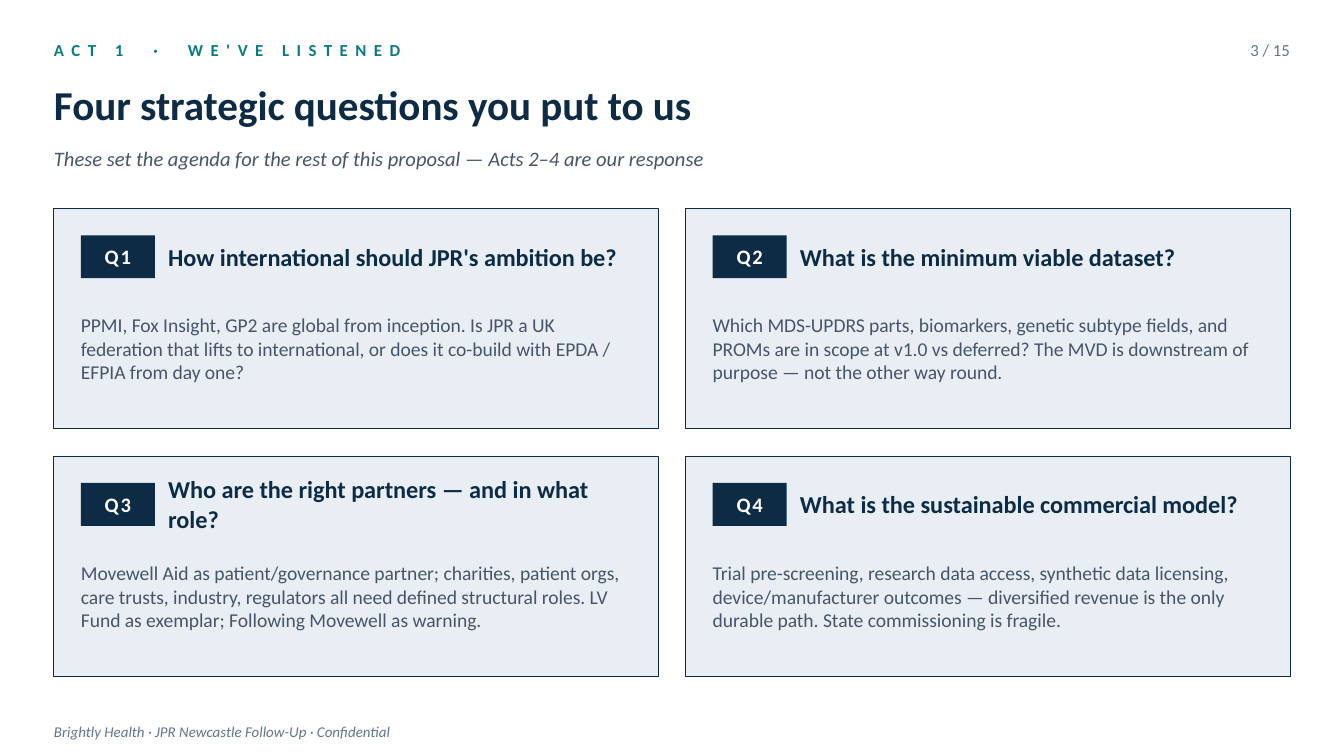
from pptx import Presentation
from pptx.dml.color import RGBColor
from pptx.enum.shapes import MSO_SHAPE
from pptx.enum.text import MSO_ANCHOR, MSO_AUTO_SIZE, PP_ALIGN
from pptx.util import Cm, Pt

NAVY = RGBColor(0x0D, 0x2B, 0x45)
TEAL = RGBColor(0x0A, 0x7B, 0x83)
SLATE = RGBColor(0x47, 0x55, 0x69)
GREY = RGBColor(0x64, 0x74, 0x8B)
PALE = RGBColor(0xE8, 0xEE, 0xF4)
WHITE = RGBColor(0xFF, 0xFF, 0xFF)

MARGIN = 1.02
CONTENT_WIDTH = 23.37
GRID_TOP = 3.94
CARD_WIDTH, CARD_HEIGHT = 11.43, 4.17
GAP = 0.51
PADDING = 0.51

QUESTIONS = [
    ("How international should JPR's ambition be?",
     "PPMI, Fox Insight, GP2 are global from inception. Is JPR a UK federation that "
     "lifts to international, or does it co-build with EPDA / EFPIA from day one?"),
    ("What is the minimum viable dataset?",
     "Which MDS-UPDRS parts, biomarkers, genetic subtype fields, and PROMs are in scope "
     "at v1.0 vs deferred? The MVD is downstream of purpose — not the other way round."),
    ("Who are the right partners — and in what role?",
     "Movewell Aid as patient/governance partner; charities, patient orgs, care trusts, "
     "industry, regulators all need defined structural roles. LV Fund as exemplar; "
     "Following Movewell as warning."),
    ("What is the sustainable commercial model?",
     "Trial pre-screening, research data access, synthetic data licensing, "
     "device/manufacturer outcomes — diversified revenue is the only durable path. "
     "State commissioning is fragile."),
]


def write_text(shape, text, size, color, bold=False, italic=False,
               align=PP_ALIGN.LEFT, spacing=0):
    """Write one formatted paragraph, vertically centred and without insets."""
    frame = shape.text_frame
    frame.word_wrap = True
    frame.auto_size = MSO_AUTO_SIZE.NONE
    frame.vertical_anchor = MSO_ANCHOR.MIDDLE
    frame.margin_left = frame.margin_right = frame.margin_top = frame.margin_bottom = 0
    paragraph = frame.paragraphs[0]
    paragraph.alignment = align
    run = paragraph.add_run()
    run.text = text
    font = run.font
    font.name = "Calibri"
    font.size = Pt(size)
    font.bold = bold
    font.italic = italic
    font.color.rgb = color
    if spacing:
        font._element.set("spc", str(spacing * 100))


def add_label(slide, box, text, **style):
    """Add a text box at box, given in centimetres."""
    write_text(slide.shapes.add_textbox(*map(Cm, box)), text, **style)


def add_title(slide, box, text, **style):
    """Place and format the title placeholder."""
    title = slide.shapes.title
    title.left, title.top, title.width, title.height = map(Cm, box)
    write_text(title, text, **style)


def add_rectangle(slide, box, fill, line=None):
    """Add a flat rectangle with an optional thin outline."""
    shape = slide.shapes.add_shape(MSO_SHAPE.RECTANGLE, *map(Cm, box))
    shape.shadow.inherit = False
    shape.fill.solid()
    shape.fill.fore_color.rgb = fill
    if line is None:
        shape.line.fill.background()
    else:
        shape.line.color.rgb = line
        shape.line.width = Pt(0.5)
    return shape


def add_question_card(slide, left, top, tag, question, detail):
    """Add a card with a numbered tag, a question and its detail."""
    add_rectangle(slide, (left, top, CARD_WIDTH, CARD_HEIGHT), PALE, NAVY)
    chip = add_rectangle(slide, (left + PADDING, top + PADDING, 1.4, 0.81), NAVY)
    write_text(chip, tag, size=11, color=WHITE, bold=True,
               align=PP_ALIGN.CENTER, spacing=1)
    add_label(slide, (left + 2.16, top + 0.46, 8.89, 0.89), question,
              size=13, color=NAVY, bold=True)
    add_label(slide, (left + PADDING, top + 1.52, CARD_WIDTH - 2 * PADDING, 2.26),
              detail, size=10.5, color=SLATE)


def main():
    """Build and save the slide."""
    presentation = Presentation()
    presentation.slide_width = Cm(25.4)
    presentation.slide_height = Cm(14.29)
    slide = presentation.slides.add_slide(presentation.slide_layouts[5])

    add_label(slide, (MARGIN, 0.56, 15.24, 0.76), "ACT 1  ·  WE'VE LISTENED",
              size=9, color=TEAL, bold=True, spacing=4)
    add_label(slide, (23.11, 0.56, 1.27, 0.76), "3 / 15",
              size=9, color=GREY, align=PP_ALIGN.RIGHT)
    add_title(slide, (MARGIN, 1.27, CONTENT_WIDTH, 1.4),
              "Four strategic questions you put to us", size=22, color=NAVY, bold=True)
    add_label(slide, (MARGIN, 2.59, CONTENT_WIDTH, 0.81),
              "These set the agenda for the rest of this proposal — Acts 2–4 are our response",
              size=11, color=SLATE, italic=True)

    for index, (question, detail) in enumerate(QUESTIONS):
        row, column = divmod(index, 2)
        add_question_card(slide, MARGIN + column * (CARD_WIDTH + GAP),
                          GRID_TOP + row * (CARD_HEIGHT + GAP),
                          f"Q{index + 1}", question, detail)

    add_label(slide, (MARGIN, 13.54, CONTENT_WIDTH, 0.56),
              "Brightly Health · JPR Newcastle Follow-Up · Confidential",
              size=8, color=GREY, italic=True)
    presentation.save("out.pptx")


if __name__ == "__main__":
    main()
